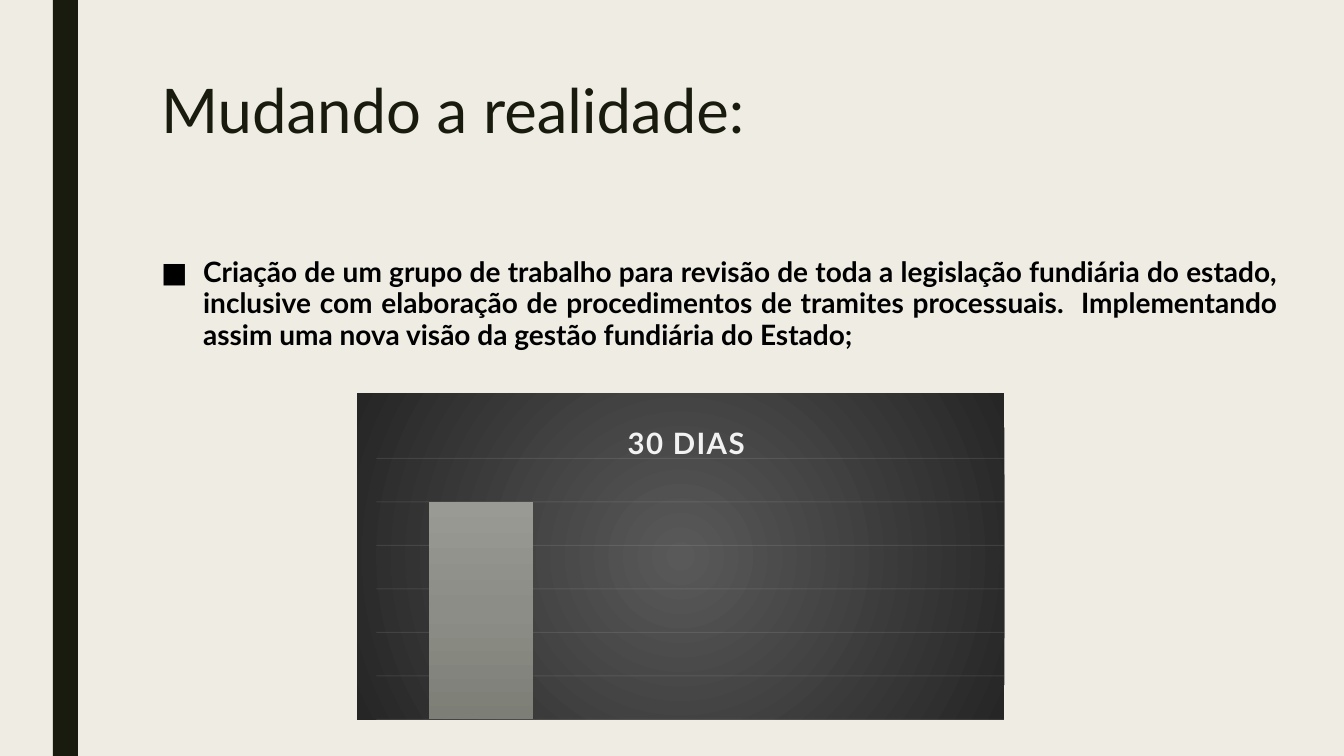
from pptx import Presentation
from pptx.chart.data import CategoryChartData
from pptx.dml.color import RGBColor
from pptx.enum.chart import XL_CHART_TYPE
from pptx.enum.shapes import MSO_SHAPE
from pptx.enum.text import MSO_ANCHOR, MSO_AUTO_SIZE, PP_ALIGN
from pptx.oxml import parse_xml
from pptx.oxml.ns import nsdecls, qn
from pptx.util import Emu, Pt

SCALE = 914400 / 100.8
FACE = "Lato"
HUES = {
    "paper": "EFEDE3", "ink": "191B0E", "black": "000000", "light": "F2F2F2",
    "glow": "595959", "edge": "262626",
    "top": "999A94", "mid": "8C8D86", "low": "7D7E76",
}


def px(num):
    return Emu(round(num * SCALE))


def hue(name):
    return RGBColor.from_string(HUES[name])


def apply(item, values):
    for name, value in values.items():
        setattr(item, name, value)


def style(font, size, color, bold=False):
    apply(font, {"name": FACE, "size": Pt(size), "bold": bold})
    font.color.rgb = hue(color)


def fill_text(holder, box, text, look, layout):
    """Move a placeholder and write one formatted paragraph in it."""
    apply(holder, dict(zip(("left", "top", "width", "height"), map(px, box))))
    frame = holder.text_frame
    apply(frame, {"word_wrap": True, "auto_size": MSO_AUTO_SIZE.NONE,
                  "vertical_anchor": MSO_ANCHOR.TOP})
    para = frame.paragraphs[0]
    apply(para, layout)
    run = para.add_run()
    run.text = text
    style(run.font, *look)
    return para


def add_bullet(para, sign, indent):
    props = para._p.get_or_add_pPr()
    props.set("marL", str(px(indent)))
    props.set("indent", str(-px(indent)))
    props.append(parse_xml(f'<a:buFont {nsdecls("a")} typeface="{FACE}"/>'))
    props.append(parse_xml(f'<a:buChar {nsdecls("a")} char="{sign}"/>'))


def add_strip(slide, box, color):
    strip = slide.shapes.add_shape(MSO_SHAPE.RECTANGLE, *map(px, box))
    strip.shadow.inherit = False
    strip.fill.solid()
    strip.fill.fore_color.rgb = hue(color)
    strip.line.fill.background()


def blend(stops, course):
    marks = "".join(
        f'<a:gs pos="{pos * 1000}"><a:srgbClr val="{HUES[name]}"/></a:gs>'
        for pos, name in stops)
    return parse_xml(f'<a:gradFill {nsdecls("a")} rotWithShape="1">'
                     f'<a:gsLst>{marks}</a:gsLst>{course}</a:gradFill>')


def place(part, index, **spots):
    """Give a chart part a manual layout, in shares of the chart."""
    for old in part.findall(qn("c:layout")):
        part.remove(old)
    inner = '<c:layoutTarget val="inner"/>' if "w" in spots else ""
    modes = '<c:xMode val="edge"/><c:yMode val="edge"/>'
    sizes = "".join(f'<c:{key} val="{val}"/>' for key, val in spots.items())
    part.insert(index, parse_xml(
        f'<c:layout {nsdecls("c")}><c:manualLayout>{inner}{modes}{sizes}'
        '</c:manualLayout></c:layout>'))


def add_bars(slide, box, title, cats, values):
    data = CategoryChartData()
    data.categories = cats
    data.add_series("Series 1", values)
    chart = slide.shapes.add_chart(
        XL_CHART_TYPE.COLUMN_CLUSTERED, *map(px, box), data).chart
    chart.has_legend = False
    style(chart.font, 10, "black")

    # Title
    chart.has_title = True
    frame = chart.chart_title.text_frame
    frame.text = title
    run = frame.paragraphs[0].runs[0]
    style(run.font, 21, "light", True)
    run.font._element.set("spc", "100")
    chart.chart_title.include_in_layout = False
    place(chart.chart_title._element, 1, x=0.41, y=0.07)

    # Axes and grid
    chart.category_axis.visible = False
    axis = chart.value_axis
    apply(axis, {"visible": False, "minimum_scale": 0, "maximum_scale": 120,
                 "major_unit": 20, "has_major_gridlines": True})
    line = axis.major_gridlines.format.line
    line.width = Pt(0.75)
    line.color.rgb = hue("light")
    for tint in axis._element.iter(qn("a:srgbClr")):
        tint.append(parse_xml(f'<a:alpha {nsdecls("a")} val="10000"/>'))

    # Bars
    plot = chart.plots[0]
    apply(plot, {"gap_width": 100, "overlap": -24, "vary_by_categories": False})
    props = plot.series[0]._element.get_or_add_spPr()
    props.insert(0, blend([(0, "top"), (50, "mid"), (100, "low")],
                          '<a:lin ang="5400000" scaled="0"/>'))

    # Plot area and backdrop
    root = chart._chartSpace
    place(root.chart.plotArea, 0, x=0.03, y=0.2, w=0.97, h=0.8)
    back = parse_xml(f'<c:spPr {nsdecls("c", "a")}><a:ln><a:noFill/></a:ln></c:spPr>')
    focus = '<a:fillToRect l="50000" t="50000" r="50000" b="50000"/>'
    back.insert(0, blend([(0, "glow"), (100, "edge")],
                         f'<a:path path="circle">{focus}</a:path>'))
    root.chart.addnext(back)


def main():
    deck = Presentation()
    apply(deck, {"slide_width": px(1344), "slide_height": px(756)})
    slide = deck.slides.add_slide(deck.slide_layouts[1])
    slide.background.fill.solid()
    slide.background.fill.fore_color.rgb = hue("paper")

    # Side strip
    add_strip(slide, (53, 0, 25, 756), "ink")

    # Title and list
    fill_text(slide.shapes.title, (151, 76, 1058, 163), "Mudando a realidade:",
              (44, "ink"), {"alignment": PP_ALIGN.LEFT, "line_spacing": 0.89})
    goal = fill_text(
        slide.placeholders[1], (151, 252, 1137, 395),
        "Criação de um grupo de trabalho para revisão de toda a legislação "
        "fundiária do estado, inclusive com elaboração de procedimentos de "
        "tramites processuais.  Implementando assim uma nova visão da gestão "
        "fundiária do Estado;",
        (20, "black", True),
        {"alignment": PP_ALIGN.JUSTIFY, "line_spacing": 0.94,
         "space_before": Pt(10), "space_after": Pt(2)})
    add_bullet(goal, "■", 42)

    # Chart
    add_bars(slide, (357, 393, 648, 327), "30 DIAS",
             ("1", "2", "3"), (100, None, None))
    deck.save("out.pptx")


if __name__ == "__main__":
    main()
